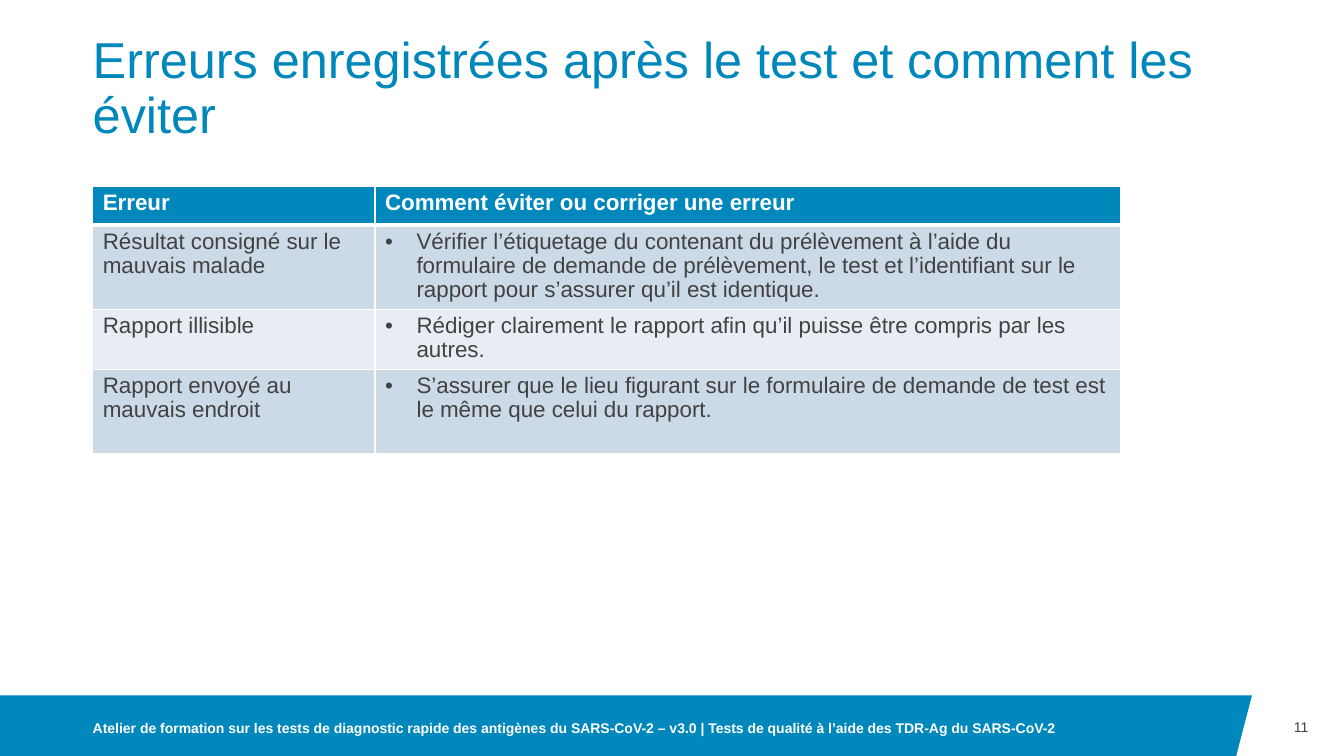
import pptx
import pptx.dml.color
import pptx.enum.text
import pptx.oxml
import pptx.oxml.ns
import pptx.util

Pt = pptx.util.Pt
RGBColor = pptx.dml.color.RGBColor
ALIGN = pptx.enum.text.PP_ALIGN
ANCHOR = pptx.enum.text.MSO_ANCHOR

BLUE = RGBColor(0x00, 0x87, 0xBC)
GREY = RGBColor(0x42, 0x42, 0x42)
WHITE = RGBColor(0xFF, 0xFF, 0xFF)
BANDS = (RGBColor(0xCC, 0xD9, 0xE7), RGBColor(0xE7, 0xED, 0xF3))

LEFT = 66.24
BULLET_INDENT = 22.5
COLUMN_WIDTHS = (201.6, 532.8)
ROW_HEIGHTS = (27.4, 60.2, 42.8, 60.2)

HEADINGS = ("Erreur", "Comment éviter ou corriger une erreur")
ERRORS = (
    ("Résultat consigné sur le mauvais malade",
     "Vérifier l’étiquetage du contenant du prélèvement à l’aide du formulaire "
     "de demande de prélèvement, le test et l’identifiant sur le rapport pour "
     "s’assurer qu’il est identique."),
    ("Rapport illisible",
     "Rédiger clairement le rapport afin qu’il puisse être compris par les autres."),
    ("Rapport envoyé au mauvais endroit",
     "S’assurer que le lieu figurant sur le formulaire de demande de test est "
     "le même que celui du rapport."),
)
FOOTER = ("Atelier de formation sur les tests de diagnostic rapide des antigènes du "
          "SARS-CoV-2 – v3.0 | Tests de qualité à l’aide des TDR-Ag du SARS-CoV-2")


def style(paragraph, size, color, bold=False, align=ALIGN.LEFT):
    paragraph.font.name = "Arial"
    paragraph.font.size = Pt(size)
    paragraph.font.bold = bold
    paragraph.font.color.rgb = color
    paragraph.alignment = align


def fill_frame(frame, text, anchor):
    frame.text = text
    frame.word_wrap = True
    frame.auto_size = pptx.enum.text.MSO_AUTO_SIZE.NONE
    frame.vertical_anchor = anchor
    frame.margin_left = frame.margin_right = 0
    frame.margin_top = frame.margin_bottom = 0
    return frame.paragraphs[0]


def set_title(slide, text):
    title = slide.shapes.title
    title.left, title.top = Pt(LEFT), Pt(28.8)
    title.width, title.height = Pt(828), Pt(74.16)
    paragraph = fill_frame(title.text_frame, text, ANCHOR.BOTTOM)
    style(paragraph, 36, BLUE)
    paragraph.line_spacing = 0.9


def add_text(slide, text, box, color, bold=False, align=ALIGN.LEFT):
    label = slide.shapes.add_textbox(*map(Pt, box))
    paragraph = fill_frame(label.text_frame, text, ANCHOR.MIDDLE)
    style(paragraph, 10, color, bold, align)


def add_footer_band(slide):
    builder = slide.shapes.build_freeform(Pt(0), Pt(496.8), scale=1.0)
    corners = ((894.24, 496.8), (883, 540), (0, 540))
    builder.add_line_segments([(Pt(x), Pt(y)) for x, y in corners], close=True)
    band = builder.convert_to_shape()
    band.fill.solid()
    band.fill.fore_color.rgb = BLUE
    band.line.fill.background()
    band.shadow.inherit = False


def add_borders(cell, top, bottom):
    properties = cell._tc.get_or_add_tcPr()
    for side, width in (("L", 1), ("R", 1), ("T", top), ("B", bottom)):
        properties.append(pptx.oxml.parse_xml(
            f'<a:ln{side} {pptx.oxml.ns.nsdecls("a")} w="{Pt(width)}">'
            f'<a:solidFill><a:srgbClr val="{WHITE}"/></a:solidFill></a:ln{side}>'))


def add_bullet(paragraph):
    properties = paragraph._p.get_or_add_pPr()
    properties.set("marL", str(Pt(BULLET_INDENT)))
    properties.set("indent", str(-Pt(BULLET_INDENT)))
    for tag, name, value in (("buFont", "typeface", "Arial"), ("buChar", "char", "•")):
        properties.append(pptx.oxml.parse_xml(
            f'<a:{tag} {pptx.oxml.ns.nsdecls("a")} {name}="{value}"/>'))


def fill_cell(cell, text, row, column):
    header = row == 0
    cell.text = text
    paragraph = cell.text_frame.paragraphs[0]
    style(paragraph, 16, WHITE if header else GREY, header)
    paragraph.line_spacing = 0.96
    if column == 1 and not header:
        add_bullet(paragraph)
    add_borders(cell, 3 if row == 1 else 1, 3 if header else 1)
    cell.fill.solid()
    cell.fill.fore_color.rgb = BLUE if header else BANDS[(row - 1) % 2]


def add_error_table(slide):
    rows = (HEADINGS, *ERRORS)
    table = slide.shapes.add_table(
        len(rows), len(HEADINGS), Pt(LEFT), Pt(133.4),
        Pt(sum(COLUMN_WIDTHS)), Pt(sum(ROW_HEIGHTS))).table
    for column, width in zip(table.columns, COLUMN_WIDTHS):
        column.width = Pt(width)
    for row, height in zip(table.rows, ROW_HEIGHTS):
        row.height = Pt(height)
    for r, texts in enumerate(rows):
        for c, text in enumerate(texts):
            fill_cell(table.cell(r, c), text, r, c)


def main():
    deck = pptx.Presentation()
    deck.slide_width, deck.slide_height = Pt(960), Pt(540)
    slide = deck.slides.add_slide(deck.slide_layouts[5])
    add_footer_band(slide)
    set_title(slide, "Erreurs enregistrées après le test et comment les éviter")
    add_text(slide, "11", (894.24, 496.8, 40.32, 45.2), GREY, align=ALIGN.RIGHT)
    add_error_table(slide)
    add_text(slide, FOOTER, (LEFT, 500.4, 766, 39.6), WHITE, bold=True)
    deck.save("out.pptx")


if __name__ == "__main__":
    main()
